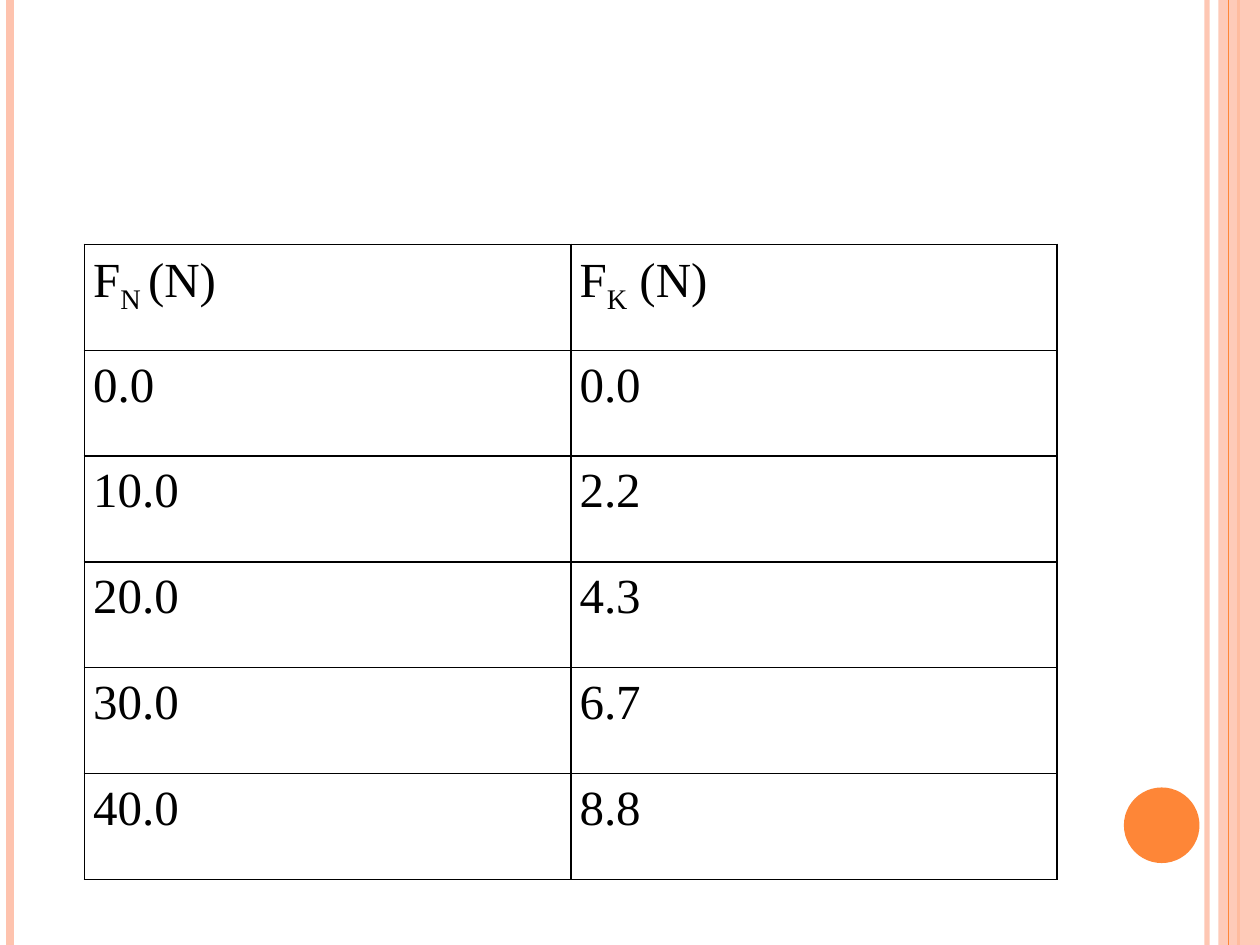
import dataclasses

import lxml.etree
import pptx
import pptx.dml.color
import pptx.enum.shapes
import pptx.oxml.ns
import pptx.util

Inches = pptx.util.Inches
Pt = pptx.util.Pt
qn = pptx.oxml.ns.qn


@dataclasses.dataclass(frozen=True)
class Theme:
    peach: str = "FEC3AE"
    orange: str = "FE8637"
    ink: str = "000000"
    font: str = "Times New Roman"
    text_size: float = 28
    line_spacing: float = 1.15
    border_width: float = 1


THEME = Theme()
SLIDE_WIDTH, SLIDE_HEIGHT = 10, 7.5

# Each cell is a list of (text, baseline shift in percent) runs
HEADINGS = [
    [("F", 0), ("N ", -25), ("(N)", 0)],
    [("F", 0), ("K", -25), (" (N)", 0)],
]
FORCES = [
    ("0.0", "0.0"),
    ("10.0", "2.2"),
    ("20.0", "4.3"),
    ("30.0", "6.7"),
    ("40.0", "8.8"),
]


def rgb(color):
    return pptx.dml.color.RGBColor.from_string(color)


def set_opacity(color_parent, percent):
    for color in color_parent.iter(qn("a:srgbClr")):
        lxml.etree.SubElement(color, qn("a:alpha"), val=str(percent * 1000))


def add_stripe(slide, x, color, width, opacity=100):
    """Draw a vertical line over the full slide height."""
    stripe = slide.shapes.add_connector(
        pptx.enum.shapes.MSO_CONNECTOR.STRAIGHT,
        Inches(x), Inches(0), Inches(x), Inches(SLIDE_HEIGHT))
    stripe.line.color.rgb = rgb(color)
    stripe.line.width = Pt(width)
    properties = stripe._element.spPr
    if opacity < 100:
        set_opacity(properties, opacity)
    lxml.etree.SubElement(properties, qn("a:effectLst"))


def add_plain_shape(slide, kind, box, color, opacity=100):
    """Draw a filled shape without outline or shadow."""
    shape = slide.shapes.add_shape(kind, *map(Inches, box))
    shape.shadow.inherit = False
    shape.fill.solid()
    shape.fill.fore_color.rgb = rgb(color)
    shape.line.fill.background()
    if opacity < 100:
        set_opacity(shape._element.spPr, opacity)


def set_borders(cell):
    properties = cell._tc.get_or_add_tcPr()
    for position, side in enumerate(("a:lnL", "a:lnR", "a:lnT", "a:lnB")):
        border = lxml.etree.Element(qn(side), w=str(Pt(THEME.border_width)))
        fill = lxml.etree.SubElement(border, qn("a:solidFill"))
        lxml.etree.SubElement(fill, qn("a:srgbClr"), val=THEME.ink)
        properties.insert(position, border)


def fill_cell(cell, runs):
    cell.margin_left = cell.margin_right = Inches(0.07)
    cell.margin_top = cell.margin_bottom = Inches(0)
    cell.fill.background()
    set_borders(cell)
    paragraph = cell.text_frame.paragraphs[0]
    paragraph.line_spacing = THEME.line_spacing
    for text, shift in runs:
        run = paragraph.add_run()
        run.text = text
        run.font.name = THEME.font
        run.font.size = Pt(THEME.text_size)
        run.font.bold = False
        run.font.color.rgb = rgb(THEME.ink)
        if shift:
            run._r.get_or_add_rPr().set("baseline", str(shift * 1000))


def add_force_table(slide, left, top, column_width, row_height):
    rows = [HEADINGS] + [[[(value, 0)] for value in pair] for pair in FORCES]
    columns = len(HEADINGS)
    forces = slide.shapes.add_table(
        len(rows), columns, Inches(left), Inches(top),
        Inches(column_width * columns), Inches(row_height * len(rows))).table
    forces.first_row = forces.horz_banding = False
    for column in forces.columns:
        column.width = Inches(column_width)
    for row, contents in zip(forces.rows, rows):
        row.height = Inches(row_height)
        for cell, runs in zip(row.cells, contents):
            fill_cell(cell, runs)


def add_decoration(slide):
    shapes = pptx.enum.shapes.MSO_SHAPE
    # Stripes and band along the edges
    add_stripe(slide, 9.58, THEME.peach, 3, opacity=93)
    add_stripe(slide, 0.08, THEME.peach, 4.5)
    add_stripe(slide, 9.83, THEME.orange, 1.5)
    add_plain_shape(slide, shapes.RECTANGLE,
                    (9.67, 0, SLIDE_WIDTH - 9.67, SLIDE_HEIGHT),
                    THEME.peach, opacity=87)
    add_stripe(slide, 9.75, THEME.orange, 0.75)
    # Dot at the lower right
    add_plain_shape(slide, shapes.OVAL, (8.92, 6.25, 0.6, 0.6), THEME.orange)


def main():
    deck = pptx.Presentation()
    deck.slide_width = Inches(SLIDE_WIDTH)
    deck.slide_height = Inches(SLIDE_HEIGHT)
    slide = deck.slides.add_slide(deck.slide_layouts[6])
    add_decoration(slide)
    # Normal force against kinetic friction
    add_force_table(slide, 0.67, 1.94, column_width=3.86, row_height=0.84)
    deck.save("out.pptx")


if __name__ == "__main__":
    main()
